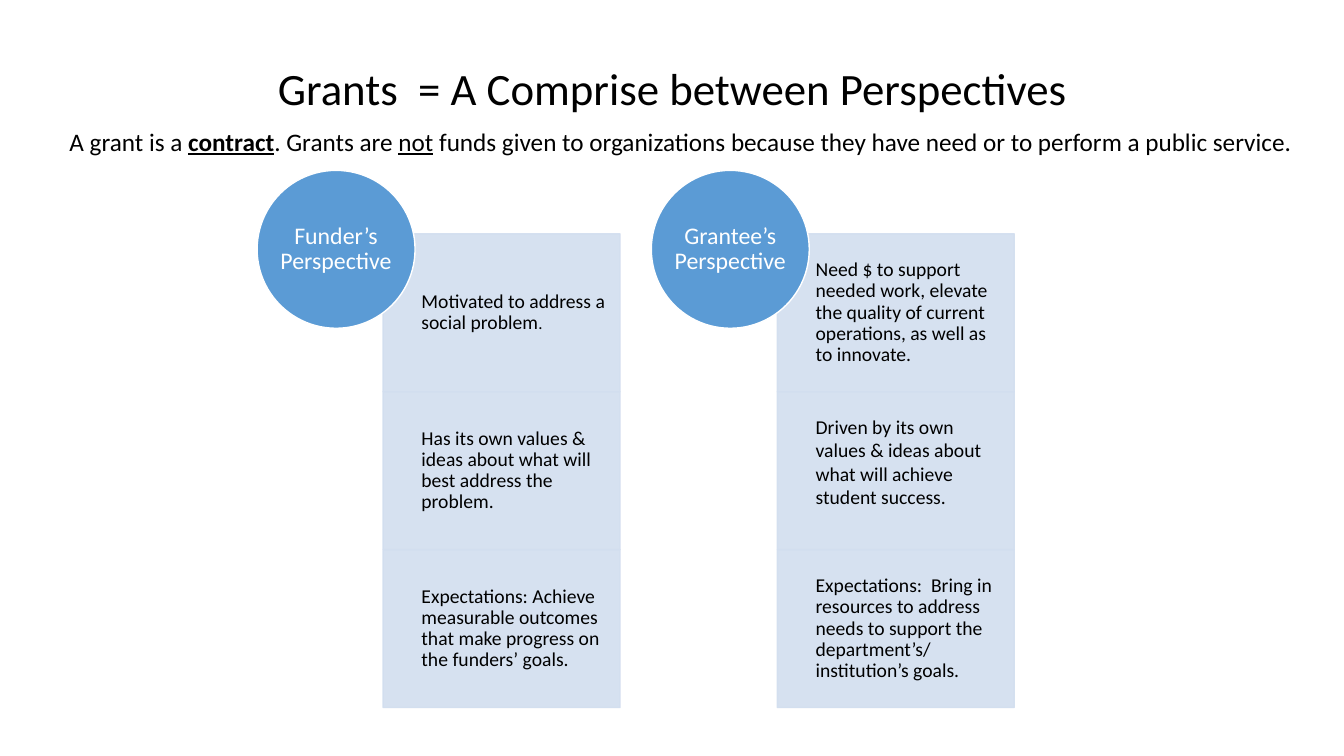
from dataclasses import dataclass

from lxml.etree import SubElement
from pptx import Presentation
from pptx.dml.color import RGBColor
from pptx.enum.shapes import MSO_SHAPE
from pptx.enum.text import MSO_ANCHOR, PP_ALIGN
from pptx.oxml.ns import qn
from pptx.util import Inches, Pt


@dataclass(frozen=True)
class Theme:
    font: str = "Calibri"
    ink: str = "000000"
    paper: str = "FFFFFF"
    circle: str = "5B9BD5"
    panel: str = "D2DEEF"
    panel_opacity: int = 90
    title_size: int = 32
    lead_size: int = 18
    circle_size: int = 17
    body_size: int = 14
    small_size: int = 12
    tight: float = 0.9


@dataclass(frozen=True)
class Run:
    text: str
    bold: bool = False
    underline: bool = False
    size: int = 0


@dataclass(frozen=True)
class Cell:
    runs: tuple
    spacing: float = 0.9
    bottom_inset: float = 0.11


THEME = Theme()
SLIDE_WIDTH, SLIDE_HEIGHT = 13.33, 7.5
COLUMN_LEFT, COLUMN_TOP, COLUMN_PITCH = 2.55, 1.69, 3.91
COLUMN_WIDTH, COLUMN_HEIGHT = 3.6, 5.33

TITLE = [Run("Grants  = A Comprise between Perspectives")]
LEAD = [
    Run("A grant is a "),
    Run("contract", bold=True, underline=True),
    Run(". Grants are "),
    Run("not", underline=True),
    Run(" funds given to organizations because they have need or to perform a public service."),
]
PERSPECTIVES = [
    ("Funder’s Perspective", [
        Cell((Run("Motivated to address a social problem"), Run(".", size=THEME.small_size))),
        Cell((Run("Has its own values & ideas about what will best address the problem."),)),
        Cell((Run("Expectations: Achieve measurable outcomes that make progress "
                  "on the funders’ goals."),)),
    ]),
    ("Grantee’s Perspective", [
        Cell((Run("Need $ to support needed work, elevate the quality of current "
                  "operations, as well as to innovate."),)),
        Cell((Run("Driven by its own values & ideas about what will achieve student success."),),
             spacing=1.0, bottom_inset=0.29),
        Cell((Run("Expectations:  Bring in resources to address needs to support "
                  "the department’s/ institution’s goals."),)),
    ]),
]


def write_text(shape, runs, size, color, align, insets, spacing=1.0, wrap=True):
    frame = shape.text_frame
    frame.word_wrap = wrap
    frame.vertical_anchor = MSO_ANCHOR.MIDDLE
    (frame.margin_left, frame.margin_top,
     frame.margin_right, frame.margin_bottom) = map(Inches, insets)
    paragraph = frame.paragraphs[0]
    paragraph.alignment = align
    paragraph.line_spacing = spacing
    for part in runs:
        run = paragraph.add_run()
        run.text = part.text
        run.font.name = THEME.font
        run.font.size = Pt(part.size or size)
        run.font.bold = part.bold
        run.font.underline = part.underline
        run.font.color.rgb = RGBColor.from_string(color)


def add_block(slide, preset, box, fill, line, opacity=100):
    shape = slide.shapes.add_shape(preset, *map(Inches, box))
    shape.shadow.inherit = False
    shape.fill.solid()
    shape.fill.fore_color.rgb = RGBColor.from_string(fill)
    shape.line.color.rgb = RGBColor.from_string(line)
    shape.line.width = Pt(1)
    if opacity < 100:
        properties = shape._element.spPr
        for owner in (properties, properties.find(qn("a:ln"))):
            color = owner.find(qn("a:solidFill")).find(qn("a:srgbClr"))
            SubElement(color, qn("a:alpha")).set("val", str(opacity * 1000))
    return shape


def add_heading(slide, box, runs, size, spacing=1.0, wrap=True, align=PP_ALIGN.LEFT):
    shape = slide.shapes.add_textbox(*map(Inches, box))
    write_text(shape, runs, size, THEME.ink, align, (0.1, 0.05, 0.1, 0.05), spacing, wrap)


def add_perspective(slide, box, name, cells):
    """Stack the cells at the lower right of the box, with the named circle at its upper left."""
    left, top, width, height = box
    panel_left, panel_top = left + 1.25, top + 0.63
    panel_width = left + width - panel_left
    row_height = (top + height - panel_top) / len(cells)
    for row, cell in enumerate(cells):
        panel = add_block(
            slide, MSO_SHAPE.RECTANGLE,
            (panel_left, panel_top + row * row_height, panel_width, row_height),
            THEME.panel, THEME.panel, THEME.panel_opacity)
        write_text(panel, cell.runs, THEME.body_size, THEME.ink, PP_ALIGN.LEFT,
                   (0.38, 0.11, 0.11, cell.bottom_inset), cell.spacing)
    circle = add_block(slide, MSO_SHAPE.OVAL, (left, top, row_height, row_height),
                       THEME.circle, THEME.paper)
    write_text(circle, [Run(name)], THEME.circle_size, THEME.paper, PP_ALIGN.CENTER,
               (0, 0, 0, 0), THEME.tight)


def main():
    presentation = Presentation()
    presentation.slide_width = Inches(SLIDE_WIDTH)
    presentation.slide_height = Inches(SLIDE_HEIGHT)
    slide = presentation.slides.add_slide(presentation.slide_layouts[6])
    add_heading(slide, (0.92, 0.4, 11.5, 1), TITLE, THEME.title_size, THEME.tight,
                align=PP_ALIGN.CENTER)
    for column, (name, cells) in enumerate(PERSPECTIVES):
        box = (COLUMN_LEFT + column * COLUMN_PITCH, COLUMN_TOP, COLUMN_WIDTH, COLUMN_HEIGHT)
        add_perspective(slide, box, name, cells)
    add_heading(slide, (0.59, 1.2, 12.41, 0.4), LEAD, THEME.lead_size, wrap=False)
    presentation.save("out.pptx")


if __name__ == "__main__":
    main()
